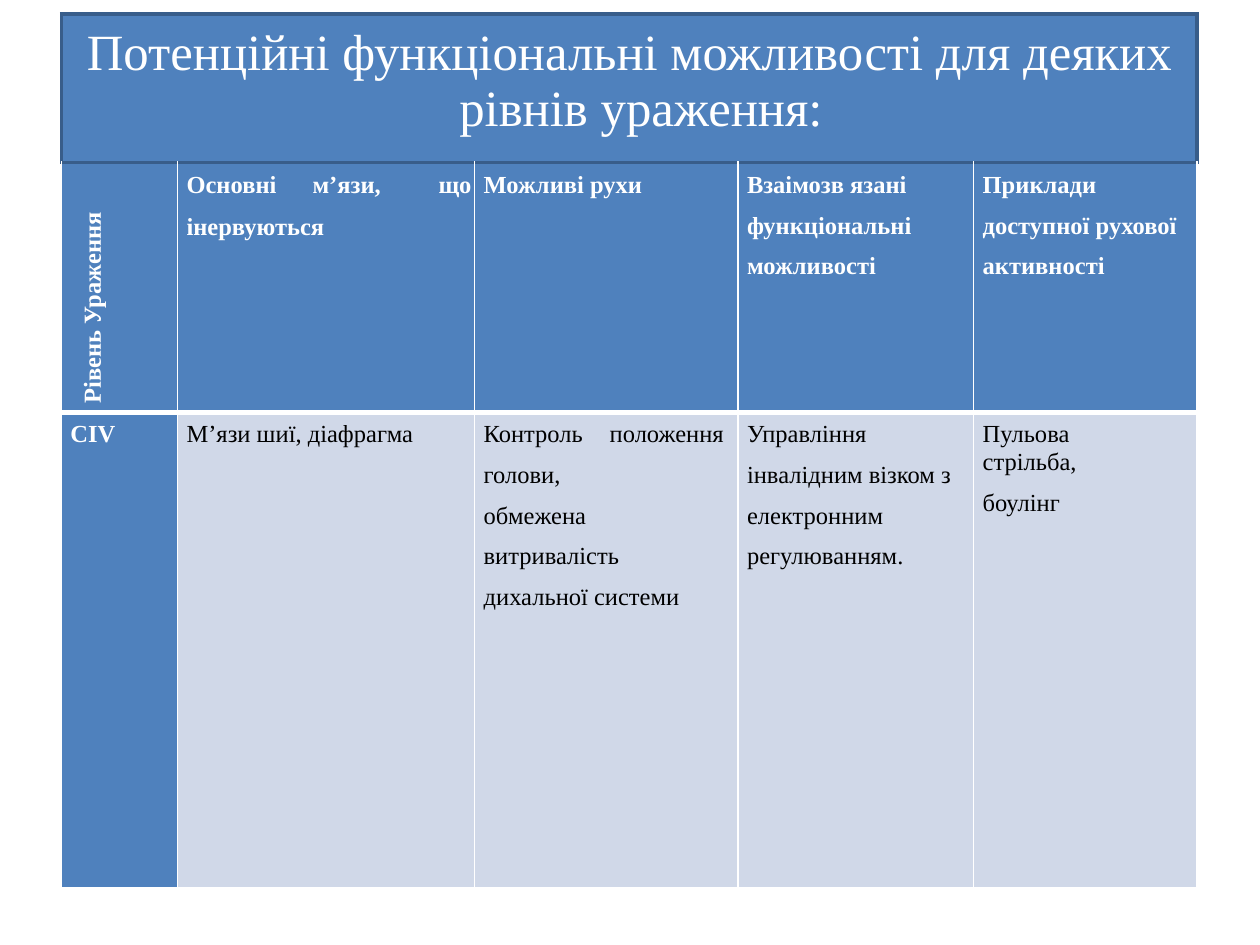
from dataclasses import dataclass
from lxml.etree import SubElement
from pptx import Presentation
from pptx.dml.color import RGBColor
from pptx.oxml.ns import qn
from pptx.util import Cm, Pt


@dataclass
class Theme:
    font: str = "Times New Roman"
    blue: str = "4F81BD"
    pale: str = "D0D8E8"
    edge: str = "385D8A"
    white: str = "FFFFFF"
    black: str = "000000"
    title: float = 29
    body: float = 14


theme = Theme()


def rule(cell, sides):
    props = cell._tc.get_or_add_tcPr()
    for place, (side, (color, width)) in enumerate(sides.items()):
        line = SubElement(props, qn("a:ln" + side), w=str(Pt(width)))
        fill = SubElement(line, qn("a:solidFill"))
        SubElement(fill, qn("a:srgbClr"), val=color)
        props.insert(place, line)


def write(para, text, size, color, bold, left=0.18, first=0, before=0, space=None, tabs=()):
    props = para._p.get_or_add_pPr()
    props.set("marL", str(Cm(left)))
    props.set("indent", str(Cm(first)))
    if tabs:
        stops = SubElement(props, qn("a:tabLst"))
        for stop in tabs:
            SubElement(stops, qn("a:tab"), pos=str(Cm(stop)), algn="l")
    para.text = text
    para.space_before = Pt(before)
    if space:
        para.line_spacing = space
    para.font.name = theme.font
    para.font.size = Pt(size)
    para.font.bold = bold
    para.font.color.rgb = RGBColor.from_string(color)


deck = Presentation()
deck.slide_width, deck.slide_height = Cm(25.4), Cm(19.05)
slide = deck.slides.add_slide(deck.slide_layouts[6])

widths = [2.34, 5.99, 5.31, 4.75, 4.5]
heights = [3, 5.03, 9.58]
frame = slide.shapes.add_table(
    3, 5, Cm(1.24), Cm(0.28), Cm(sum(widths)), Cm(sum(heights))
)
table = frame.table
table.first_row = table.horz_banding = False
for column, width in zip(table.columns, widths):
    column.width = Cm(width)
for row, height in zip(table.rows, heights):
    row.height = Cm(height)

wide = {"space": 1.5}
loose = {"before": 8.4}
grid = [
    [
        [("Рівень Ураження", {"before": 1.9, "space": 1.5})],
        [("Основні\tм’язи,\tщо", {"tabs": [2.87, 5.13]}), ("інервуються", loose)],
        [("Можливі рухи", {})],
        [("Взаімозв язані", {}), ("функціональні можливості", wide)],
        [("Приклади", {}), ("доступної рухової активності", wide)],
    ],
    [
        [("CIV", {})],
        [("М’язи шиї, діафрагма", {})],
        [
            ("Контроль\tположення", {"tabs": [2.82]}),
            ("голови,\vобмежена\vвитривалість\vдихальної системи", wide),
        ],
        [("Управління", {}), ("інвалідним візком з електронним регулюванням.", wide)],
        [("Пульова\tстрільба,", {"tabs": [2.41]}), ("боулінг", loose)],
    ],
]

thin, thick, frame_line = (theme.white, 1), (theme.white, 3), (theme.edge, 2.25)

head = table.cell(0, 0)
head.merge(table.cell(0, 4))
write(
    head.text_frame.paragraphs[0],
    "Потенційні функціональні можливості для деяких рівнів ураження:",
    theme.title, theme.white, False, left=8.02, first=-7.51, before=6.5,
)

for r, line in enumerate(grid, 1):
    for c, items in enumerate(line):
        text = table.cell(r, c).text_frame
        dark = r == 1 or c == 0
        color = theme.white if dark else theme.black
        for n, (words, style) in enumerate(items):
            para = text.add_paragraph() if n else text.paragraphs[0]
            style = style if n else {"before": 4.9, **style}
            write(para, words, theme.body, color, dark, **style)

for r in range(3):
    for c in range(5):
        cell = table.cell(r, c)
        cell.margin_left = cell.margin_right = cell.margin_bottom = 0
        cell.margin_top = Cm([0.23, 0.18, 0.18][r])
        cell.fill.solid()
        shade = theme.pale if r == 2 and c else theme.blue
        cell.fill.fore_color.rgb = RGBColor.from_string(shade)
        if r == 0:
            rule(cell, dict.fromkeys("LRTB", frame_line))
        else:
            top, base = (frame_line, thick) if r == 1 else (thick, thin)
            rule(cell, {"L": thin, "R": thin, "T": top, "B": base})

side = table.cell(1, 0)
side.margin_top = Cm(0.08)
side._tc.get_or_add_tcPr().set("vert", "vert270")

deck.save("out.pptx")
